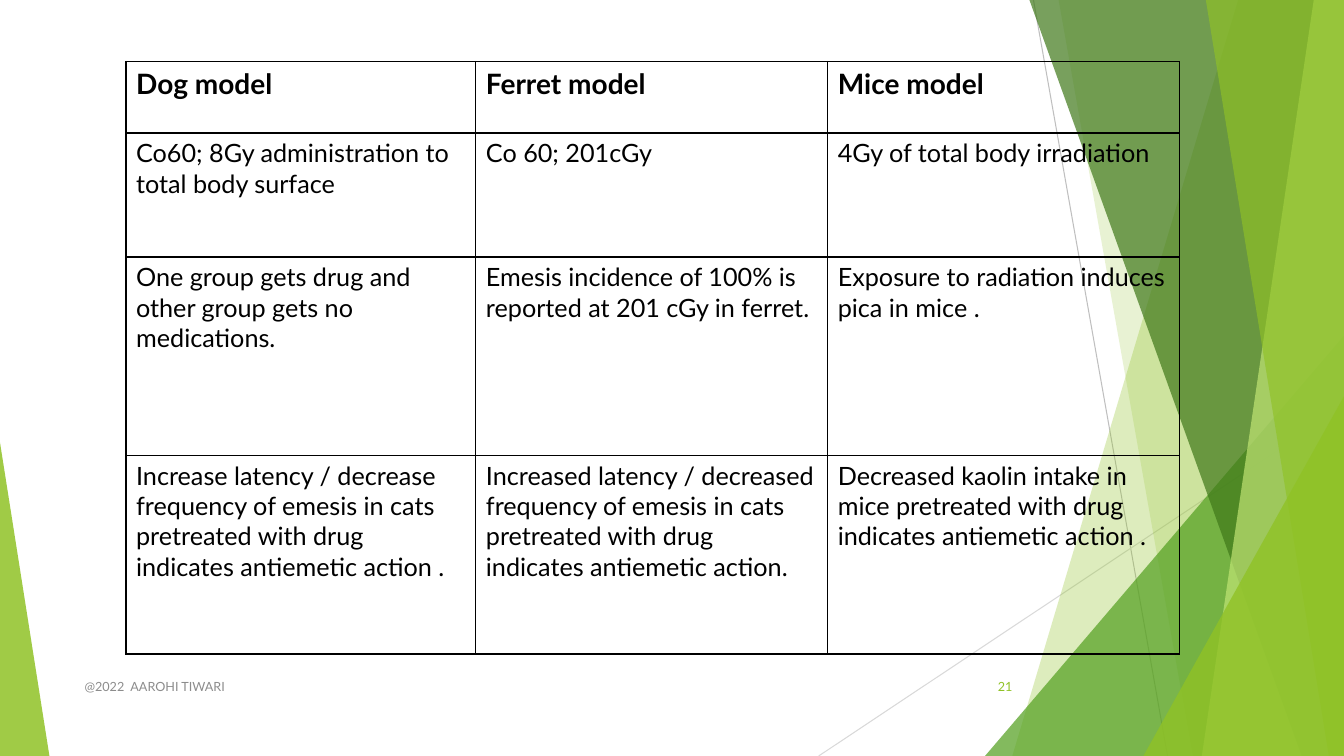
from pptx import Presentation
from pptx.dml.color import RGBColor as Rgb
from pptx.enum.shapes import MSO_CONNECTOR as Conn, MSO_SHAPE as Kind
from pptx.enum.text import MSO_ANCHOR as Anchor, PP_ALIGN as Align
from pptx.oxml.ns import qn
from pptx.util import Inches, Pt
from lxml import etree

WIDE, HIGH = 13.33, 7.5
HUES = {
    "lime": "90C226", "leaf": "54A021", "moss": "3F7819", "pale": "C0E474",
    "ash": "BFBFBF", "mist": "D9D9D9", "grey": "8C8C8C", "ink": "000000",
}
HEAD = {"name": "Lato", "size": Pt(20), "bold": True}
BODY = {"name": "Lato", "size": Pt(18), "bold": False}
SMALL = {"name": "Lato", "size": Pt(9), "bold": False}

# Right-hand facets, back to front: a panel has its top and bottom x,
# a wedge has its left x and top y; both reach the right edge
FACETS = [
    ("panel", 12.28, 10.04, "lime", 30),
    ("panel", 10.5, 11.83, "lime", 20),
    ("wedge", 9.77, 3.33, "leaf", 72),
    ("panel", 10.21, 12.91, "moss", 70),
    ("panel", 13.03, 11.92, "pale", 70),
    ("panel", 11.96, 13.18, "lime", 65),
    ("wedge", 11.34, 3.93, "lime", 80),
]
RAYS = [(10.25, 0, 11.58, 7.5, "ash"), (13.33, 4.03, 8.12, 7.5, "mist")]

COLS = [3.47, 3.49, 3.49]
ROWS = [0.71, 1.23, 1.97, 1.97]
MODELS = [
    ["Dog model", "Ferret model", "Mice model"],
    ["Co60; 8Gy administration to total body surface",
     "Co 60; 201cGy",
     "4Gy of total body irradiation"],
    ["One group gets drug and other group gets no medications.",
     "Emesis incidence of 100% is reported at 201 cGy in ferret.",
     "Exposure to radiation induces pica in mice ."],
    ["Increase latency / decrease frequency of emesis in cats pretreated "
     "with drug indicates antiemetic action .",
     "Increased latency / decreased frequency of emesis in cats pretreated "
     "with drug indicates antiemetic action.",
     "Decreased kaolin intake in mice pretreated with drug indicates "
     "antiemetic action ."],
]


def hue(name):
    return Rgb.from_string(HUES[name])


def write(frame, text, style, tint):
    para = frame.paragraphs[0]
    run = para.add_run()
    run.text = text
    for key, value in style.items():
        setattr(run.font, key, value)
    run.font.color.rgb = hue(tint)
    return para


def paint(shape, tint, alpha):
    shape.shadow.inherit = False
    shape.line.fill.background()
    shape.fill.solid()
    shape.fill.fore_color.rgb = hue(tint)
    color = shape.fill._xPr.find(".//" + qn("a:srgbClr"))
    etree.SubElement(color, qn("a:alpha"), val=str(alpha * 1000))


def ray(slide, x1, y1, x2, y2, tint):
    line = slide.shapes.add_connector(
        Conn.STRAIGHT, Inches(x1), Inches(y1), Inches(x2), Inches(y2))
    line.line.color.rgb = hue(tint)
    line.line.width = Pt(0.75)
    etree.SubElement(line._element.spPr, qn("a:effectLst"))


def panel(slide, points, tint, alpha):
    spots = [(Inches(x), Inches(y)) for x, y in points]
    form = slide.shapes.build_freeform(*spots[0])
    form.add_line_segments(spots[1:], close=True)
    paint(form.convert_to_shape(), tint, alpha)


def wedge(slide, box, peak, tint, alpha):
    shape = slide.shapes.add_shape(Kind.ISOSCELES_TRIANGLE, *map(Inches, box))
    shape.adjustments[0] = peak
    paint(shape, tint, alpha)


def backdrop(slide, box):
    left, top, width, height = box
    right, base = left + width, top + height
    for x1, y1, x2, y2, tint in RAYS:
        ray(slide, left + x1, top + y1, left + x2, top + y2, tint)
    for kind, a, b, tint, alpha in FACETS:
        if kind == "panel":
            points = [(left + a, top), (right, top), (right, base), (left + b, base)]
            panel(slide, points, tint, alpha)
        else:
            wedge(slide, (left + a, top + b, width - a, height - b), 1, tint, alpha)
    # Left edge
    wedge(slide, (left, top + 4.39, 0.49, height - 4.39), 0, "lime", 85)


def border(cell):
    props = cell._tc.get_or_add_tcPr()
    for place, side in enumerate(("lnL", "lnR", "lnT", "lnB")):
        line = etree.Element(qn("a:" + side), w=str(Pt(1)))
        fill = etree.SubElement(line, qn("a:solidFill"))
        etree.SubElement(fill, qn("a:srgbClr"), val=HUES["ink"])
        props.insert(place, line)


def models(slide, box):
    frame = slide.shapes.add_table(len(ROWS), len(COLS), *map(Inches, box))
    table = frame.table
    table.first_row = table.horz_banding = False
    for col, width in zip(table.columns, COLS):
        col.width = Inches(width)
    for r, (texts, height) in enumerate(zip(MODELS, ROWS)):
        table.rows[r].height = Inches(height)
        for c, text in enumerate(texts):
            cell = table.cell(r, c)
            cell.fill.background()
            border(cell)
            write(cell.text_frame, text, BODY if r else HEAD, "ink")


def note(slide, box, text, tint, align):
    frame = slide.shapes.add_textbox(*map(Inches, box)).text_frame
    frame.word_wrap = True
    frame.vertical_anchor = Anchor.MIDDLE
    write(frame, text, SMALL, tint).alignment = align


def footer(slide, box):
    left, top, width, height = box
    note(slide, (left, top, 6.89, height), "@2022  AAROHI TIWARI", "grey", Align.LEFT)
    note(slide, (left + width - 0.75, top, 0.75, height), "21", "lime", Align.RIGHT)


def main():
    deck = Presentation()
    deck.slide_width, deck.slide_height = Inches(WIDE), Inches(HIGH)
    slide = deck.slides.add_slide(deck.slide_layouts[6])
    backdrop(slide, (0, 0, WIDE, HIGH))
    models(slide, (1.25, 0.61, sum(COLS), sum(ROWS)))
    footer(slide, (0.74, 6.61, 9.4, 0.4))
    deck.save("out.pptx")


if __name__ == "__main__":
    main()
